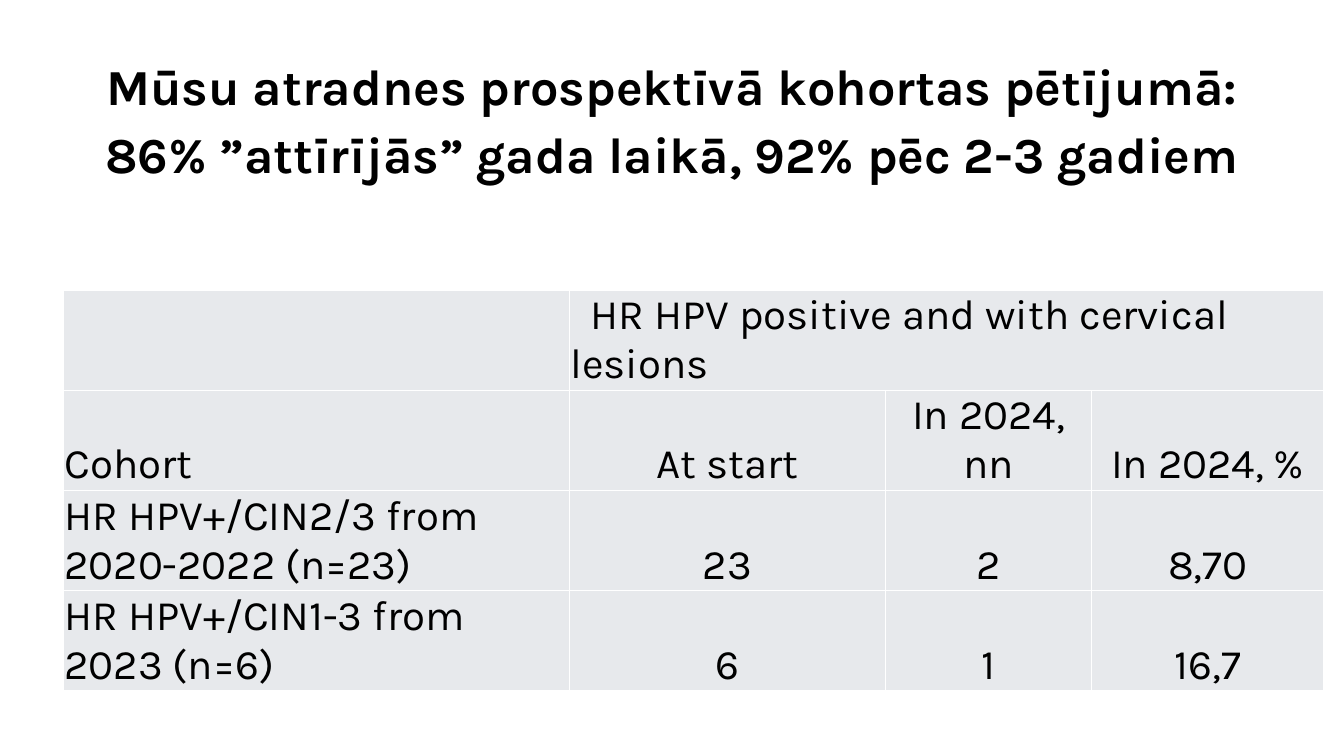
import pptx
import pptx.dml.color
import pptx.enum.text
import pptx.oxml
import pptx.oxml.ns
import pptx.util

BLACK = pptx.dml.color.RGBColor(0x00, 0x00, 0x00)
WHITE = pptx.dml.color.RGBColor(0xFF, 0xFF, 0xFF)
GREY = pptx.dml.color.RGBColor(0xE7, 0xE9, 0xEC)
FONT = "Karla"
ALIGN = pptx.enum.text.PP_ALIGN

prs = pptx.Presentation()
prs.slide_width = pptx.util.Inches(13.33)
prs.slide_height = pptx.util.Inches(7.5)
W, H = prs.slide_width, prs.slide_height
s = prs.slides.add_slide(prs.slide_layouts[6])


def style(p, size, align, bold=False):
    p.alignment = align
    p.font.name = FONT
    p.font.size = pptx.util.Pt(size)
    p.font.bold = bold
    p.font.color.rgb = BLACK


def add_borders(cell):
    tcPr = cell._tc.get_or_add_tcPr()
    for i, side in enumerate(("lnL", "lnR", "lnT", "lnB")):
        tcPr.insert(i, pptx.oxml.parse_xml(
            f'<a:{side} {pptx.oxml.ns.nsdecls("a")} w="{pptx.util.Pt(1)}">'
            f'<a:solidFill><a:srgbClr val="{WHITE}"/></a:solidFill></a:{side}>'))


COLUMNS = [5.02, 3.13, 2.05, 2.3]
ROWS = [
    ["", "HR HPV positive and with cervical lesions", "", ""],
    ["Cohort", "At start", "In 2024, nn", "In 2024, %"],
    ["HR HPV+/CIN2/3 from 2020-2022 (n=23)", "23", "2", "8,70"],
    ["HR HPV+/CIN1-3 from 2023 (n=6)", "6", "1", "16,7"],
]
ROW_HEIGHT = pptx.util.Inches(0.22)

table = s.shapes.add_table(
    len(ROWS), len(COLUMNS), pptx.util.Inches(0.63), pptx.util.Inches(2.88),
    pptx.util.Inches(sum(COLUMNS)), ROW_HEIGHT * len(ROWS)).table
table.first_row = False
table.horz_banding = False
for column, width in zip(table.columns, COLUMNS):
    column.width = pptx.util.Inches(width)

for r, texts in enumerate(ROWS):
    table.rows[r].height = ROW_HEIGHT
    for c, text in enumerate(texts):
        cell = table.cell(r, c)
        cell.fill.solid()
        cell.fill.fore_color.rgb = GREY
        add_borders(cell)
        cell.vertical_anchor = pptx.enum.text.MSO_ANCHOR.BOTTOM
        cell.margin_left = cell.margin_right = pptx.util.Inches(0.01)
        cell.margin_top = cell.margin_bottom = pptx.util.Inches(0.01)
        if text:
            p = cell.text_frame.paragraphs[0]
            p.text = text
            style(p, 30, ALIGN.CENTER if r and c else ALIGN.LEFT)

heading = table.cell(0, 1)
heading.merge(table.cell(0, 3))
pPr = heading.text_frame.paragraphs[0]._p.get_or_add_pPr()
pPr.set("marL", "0")
pPr.set("indent", str(pptx.util.Inches(0.2)))

title = s.shapes.add_textbox(
    int(W * 0.055), int(H * 0.075), int(W * 0.89), int(H * 0.183))
tf = title.text_frame
tf.word_wrap = True
tf.auto_size = pptx.enum.text.MSO_AUTO_SIZE.SHAPE_TO_FIT_TEXT
tf.margin_left = tf.margin_right = pptx.util.Inches(0.05)
tf.margin_top = tf.margin_bottom = pptx.util.Inches(0.05)
tf.text = ("Mūsu atradnes prospektīvā kohortas pētījumā:\n"
           "86% ”attīrījās” gada laikā, 92% pēc 2-3 gadiem")
for p in tf.paragraphs:
    style(p, 36, ALIGN.CENTER, bold=True)
    p.line_spacing = 0.9
    p.space_before = pptx.util.Pt(10)

prs.save("out.pptx")
